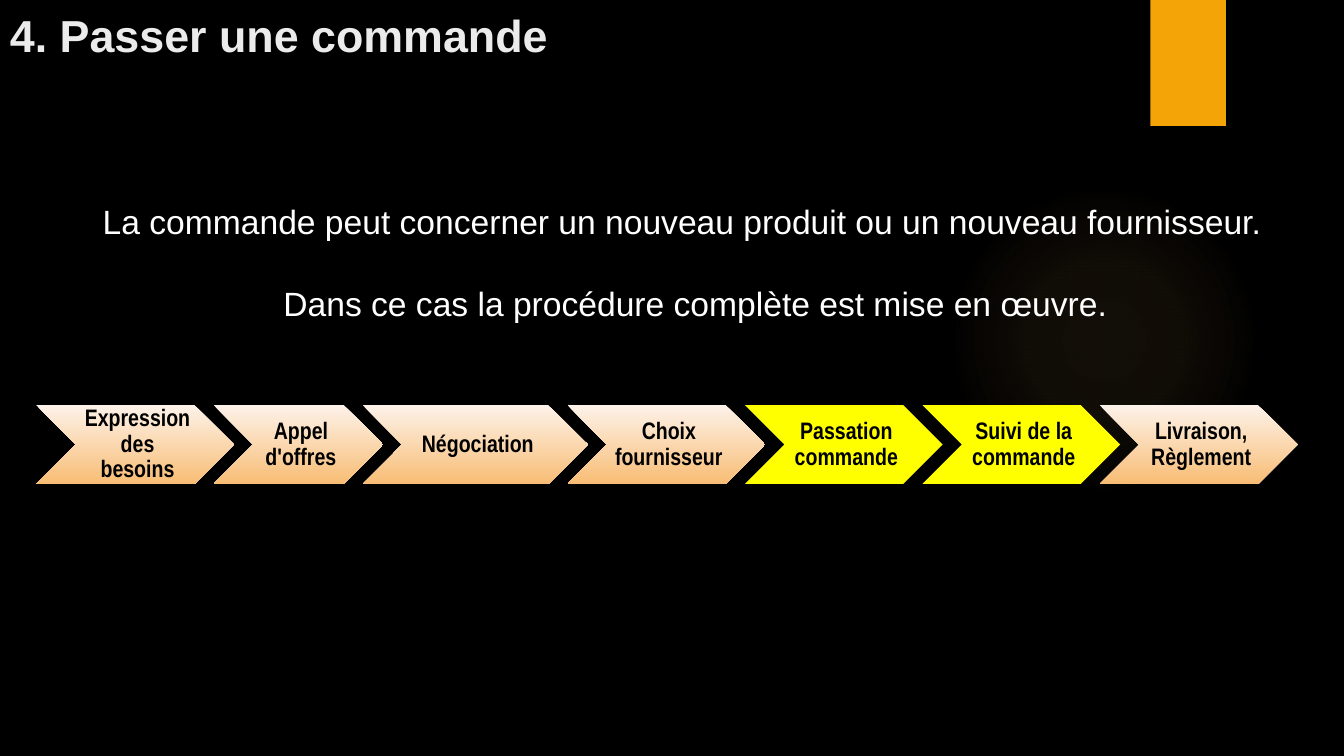
import pptx
import pptx.dml.color
import pptx.enum.shapes
import pptx.enum.text
import pptx.oxml
import pptx.util

RGBColor = pptx.dml.color.RGBColor
BLACK = RGBColor(0x00, 0x00, 0x00)
WHITE = RGBColor(0xFF, 0xFF, 0xFF)
PALE = RGBColor(0xEB, 0xEB, 0xEB)
ORANGE = RGBColor(0xF5, 0xA4, 0x08)
GLOW = RGBColor(0xFA, 0xC9, 0x6A)
CREAM = RGBColor(0xFD, 0xF2, 0xE9)
PEACH = RGBColor(0xF8, 0xBD, 0x75)
YELLOW = RGBColor(0xFF, 0xFF, 0x00)

SHAPE = pptx.enum.shapes.MSO_SHAPE
ALIGN = pptx.enum.text.PP_ALIGN
ANCHOR = pptx.enum.text.MSO_ANCHOR
DRAWING = "http://schemas.openxmlformats.org/drawingml/2006/main"

STEPS = [
    ("Expression des besoins", 19.6, False),
    ("Appel d'offres", 16.8, False),
    ("Négociation", 22.3, False),
    ("Choix fournisseur", 19.6, False),
    ("Passation commande", 19.6, True),
    ("Suivi de la commande", 19.6, True),
    ("Livraison, Règlement", 19.6, False),
]


class OrderSlide:
    """Draws on one slide, measuring in grid cells of a tenth of an inch."""

    cell = pptx.util.Inches(0.1)
    title_font = "Arial"
    step_font = "Arial Narrow"

    def __init__(self, deck):
        self.page = deck.slides.add_slide(deck.slide_layouts[6])
        self.page.background.fill.solid()
        self.page.background.fill.fore_color.rgb = BLACK

    def place(self, *cells):
        return [round(count * self.cell) for count in cells]

    def shape(self, kind, place, color, shapes=None):
        shapes = self.page.shapes if shapes is None else shapes
        shape = shapes.add_shape(kind, *self.place(*place))
        shape.shadow.inherit = False
        shape.line.fill.background()
        shape.fill.solid()
        shape.fill.fore_color.rgb = color
        return shape

    def glow(self, place, color, stops):
        properties = self.shape(SHAPE.OVAL, place, color)._element.spPr
        marks = "".join(
            f'<a:gs pos="{spot * 1000}"><a:srgbClr val="{color}">'
            f'<a:alpha val="{alpha * 1000}"/></a:srgbClr></a:gs>'
            for spot, alpha in stops
        )
        gradient = pptx.oxml.parse_xml(
            f'<a:gradFill xmlns:a="{DRAWING}"><a:gsLst>{marks}</a:gsLst>'
            '<a:path path="circle"><a:fillToRect l="50000" t="50000" '
            'r="50000" b="50000"/></a:path></a:gradFill>'
        )
        properties.replace(properties.find(f"{{{DRAWING}}}solidFill"), gradient)

    def add_span(self, para, text, size, color, font, bold=False):
        span = para.add_run()
        span.text = text
        span.font.size = pptx.util.Pt(size)
        span.font.name = font
        span.font.bold = bold
        span.font.color.rgb = color

    def text_box(self, place, anchor):
        frame = self.page.shapes.add_textbox(*self.place(*place)).text_frame
        frame.word_wrap = True
        frame.vertical_anchor = anchor
        return frame

    def title(self, text):
        frame = self.text_box((0, -0.4, 96.5, 7), ANCHOR.BOTTOM)
        self.add_span(frame.paragraphs[0], text, 32, PALE, self.title_font, True)

    def message(self, first, second):
        frame = self.text_box((9.2, 19.1, 119.5, 17.2), ANCHOR.TOP)
        frame.margin_top = pptx.util.Inches(0.08)
        self.add_span(frame.paragraphs[0], first, 24, WHITE, self.title_font)
        para = frame.add_paragraph()
        para.alignment = ALIGN.CENTER
        para.space_before = pptx.util.Pt(30)
        self.add_span(para, second, 24, WHITE, self.title_font)

    def step(self, shapes, place, text, active):
        chevron = self.shape(SHAPE.CHEVRON, place, YELLOW, shapes)
        if not active:
            chevron.fill.gradient()
            chevron.fill.gradient_angle = 270
            for stop, color in zip(chevron.fill.gradient_stops, (CREAM, PEACH)):
                stop.color.rgb = color
        frame = chevron.text_frame
        frame.word_wrap = True
        frame.vertical_anchor = ANCHOR.MIDDLE
        frame.margin_left = pptx.util.Inches(0.07)
        frame.margin_top = frame.margin_right = frame.margin_bottom = pptx.util.Inches(0.02)
        para = frame.paragraphs[0]
        para.alignment = ALIGN.CENTER
        para.line_spacing = 0.9
        self.add_span(para, text, 17, BLACK, self.step_font, True)

    def process(self, left, top, height, overlap, steps):
        chain = self.page.shapes.add_group_shape()
        for text, width, active in steps:
            self.step(chain.shapes, (left, top, width, height), text, active)
            left += width - overlap


def main():
    deck = pptx.Presentation()
    deck.slide_width = pptx.util.Inches(13.33)
    deck.slide_height = pptx.util.Inches(7.5)
    slide = OrderSlide(deck)
    slide.glow((94.1, 18.3, 30.8, 30.8), GLOW, [(0, 7), (36, 6), (69, 0)])
    slide.shape(SHAPE.RECTANGLE, (114.1, 0, 7.5, 12.5), ORANGE)
    slide.title("4. Passer une commande")
    slide.message(
        "La commande peut concerner un nouveau produit ou un nouveau fournisseur.",
        "Dans ce cas la procédure complète est mise en œuvre.",
    )
    slide.process(3.6, 40.2, 7.8, 2, STEPS)
    deck.save("out.pptx")


if __name__ == "__main__":
    main()
